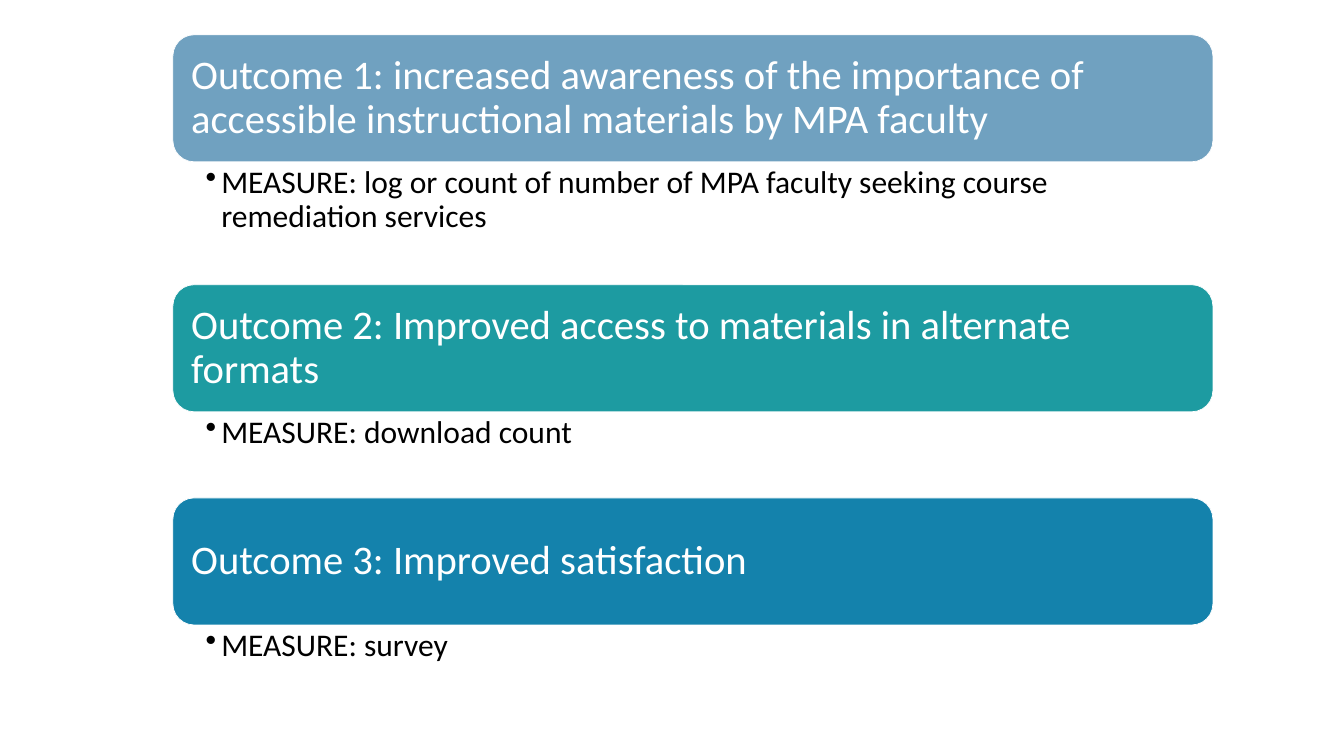
from pptx import Presentation
from pptx.dml.color import RGBColor
from pptx.enum.shapes import MSO_SHAPE as Shape
from pptx.enum.text import MSO_ANCHOR as Anchor, PP_ALIGN as Align
from pptx.oxml.ns import qn
from pptx.util import Pt
from lxml.etree import SubElement

PX = 9144  # EMU per px, 100 px to the inch
WHITE = RGBColor(0xFF, 0xFF, 0xFF)
BLACK = RGBColor(0x00, 0x00, 0x00)
STEEL = RGBColor(0x70, 0xA1, 0xC0)
TEAL = RGBColor(0x1D, 0x9B, 0xA1)
BLUE = RGBColor(0x14, 0x82, 0xAC)

LEFT, TOP, WIDTH, BAR = 343, 69, 2063, 252

# Bar colour, outcome, measure, height of the measure box
GOALS = [
    (STEEL, "Outcome 1: increased awareness of the importance of "
     "accessible instructional materials by MPA faculty",
     "MEASURE: log or count of number of MPA faculty seeking course "
     "remediation services", 244),
    (TEAL, "Outcome 2: Improved access to materials in alternate formats",
     "MEASURE: download count", 171),
    (BLUE, "Outcome 3: Improved satisfaction", "MEASURE: survey", 105),
]


def px(*sizes):
    return [size * PX for size in sizes]


def write(shape, text, size, color, insets, anchor):
    """Fill a shape with one paragraph and return that paragraph."""
    frame = shape.text_frame
    frame.word_wrap = True
    frame.vertical_anchor = anchor
    (frame.margin_left, frame.margin_top,
     frame.margin_right, frame.margin_bottom) = px(*insets)
    para = frame.paragraphs[0]
    para.alignment = Align.LEFT
    para.line_spacing = 0.9
    run = para.add_run()
    run.text = text
    run.font.name = "Calibri"
    run.font.size = Pt(size)
    run.font.color.rgb = color
    return para


def add_bar(slide, box, color, text):
    bar = slide.shapes.add_shape(Shape.ROUNDED_RECTANGLE, *px(*box))
    bar.shadow.inherit = False
    bar.fill.solid()
    bar.fill.fore_color.rgb = color
    bar.line.color.rgb = WHITE
    bar.line.width = Pt(1)
    # The rounded corners add 12 px to each inset
    write(bar, text, 58, WHITE, (24, 24, 24, 24), Anchor.MIDDLE)


def add_note(slide, box, text):
    note = slide.shapes.add_textbox(*px(*box))
    para = write(note, text, 45, BLACK, (65, 8, 45, 8), Anchor.TOP)
    para.level = 1
    # Hanging bullet
    props = para._p.get_or_add_pPr()
    props.set("marL", str(31 * PX))
    props.set("indent", str(-31 * PX))
    SubElement(props, qn("a:buChar")).set("char", "•")


def add_goals(slide, left, top, width):
    """Stack each outcome bar above its measure."""
    for color, goal, measure, height in GOALS:
        add_bar(slide, (left, top, width, BAR), color, goal)
        top += BAR
        add_note(slide, (left, top, width, height), measure)
        top += height


def main():
    deck = Presentation()
    deck.slide_width, deck.slide_height = px(2666, 1500)
    slide = deck.slides.add_slide(deck.slide_layouts[6])
    add_goals(slide, LEFT, TOP, WIDTH)
    deck.save("out.pptx")


if __name__ == "__main__":
    main()
